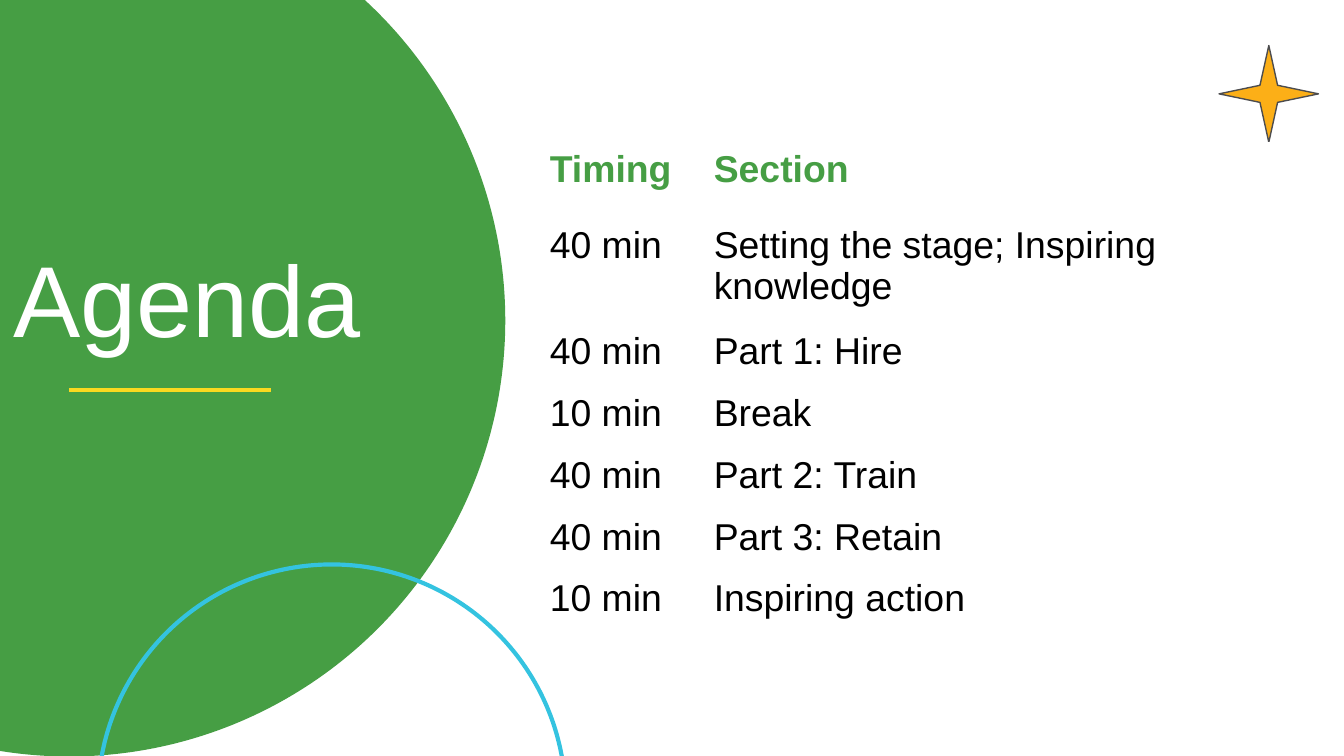
"""Build the agenda slide."""
import pptx
import pptx.chart.data
import pptx.dml.color
import pptx.enum.shapes
import pptx.enum.text
import pptx.util
from pptx.oxml.xmlchemy import OxmlElement

Cm, Pt = pptx.util.Cm, pptx.util.Pt
KIND = pptx.enum.shapes.MSO_SHAPE

TITLE = "Agenda"
AGENDA = [
    ("Timing", "Section"),
    ("40 min", "Setting the stage; Inspiring knowledge"),
    ("40 min", "Part 1: Hire"),
    ("10 min", "Break"),
    ("40 min", "Part 2: Train"),
    ("40 min", "Part 3: Retain"),
    ("10 min", "Inspiring action"),
]
COLS = [3.1, 11.05]
ROWS = [1.42, 2.01] + [1.17] * 4 + [2.01]
COLORS = {
    "green": "469E44", "white": "FFFFFF", "black": "000000", "gold": "FCAF17",
    "grey": "4C4C4E", "blue": "34C3E0", "yellow": "FAD920",
}


def color(name):
    return pptx.dml.color.RGBColor.from_string(COLORS[name])


def paint(fill, name):
    if name:
        fill.solid()
        fill.fore_color.rgb = color(name)
    else:
        fill.background()


def stroke(line, name, width):
    paint(line.fill, name)
    if name:
        line.width = Pt(width)


def style(para, size, name, bold=False):
    font = para.font
    font.name, font.size, font.bold = "Arial", Pt(size), bold
    font.color.rgb = color(name)


def add_shape(slide, kind, box, fill=None, line=None, width=0):
    shape = slide.shapes.add_shape(kind, *map(Cm, box))
    shape.shadow.inherit = False
    paint(shape.fill, fill)
    stroke(shape.line, line, width)
    return shape


def add_title(slide):
    title = slide.shapes.title
    slide.shapes._spTree.append(title._element)
    title.left, title.top, title.width, title.height = map(Cm, (0, 4.47, 8.84, 2.57))
    frame = title.text_frame
    frame.text = TITLE
    frame.word_wrap = True
    frame.auto_size = pptx.enum.text.MSO_AUTO_SIZE.NONE
    frame.vertical_anchor = pptx.enum.text.MSO_ANCHOR.MIDDLE
    frame.margin_left = frame.margin_right = Cm(0.25)
    frame.margin_top = frame.margin_bottom = Cm(0.25)
    para = frame.paragraphs[0]
    para.alignment = pptx.enum.text.PP_ALIGN.LEFT
    para.line_spacing = 0.9
    style(para, 54, "white")


def add_agenda(slide):
    box = map(Cm, (10.21, 2.69, sum(COLS), sum(ROWS)))
    table = slide.shapes.add_table(len(ROWS), len(COLS), *box).table
    table.horz_banding = table.first_row = False
    for col, width in zip(table.columns, COLS):
        col.width = Cm(width)
    for r, (height, texts) in enumerate(zip(ROWS, AGENDA)):
        table.rows[r].height = Cm(height)
        head = r == 0
        for c, text in enumerate(texts):
            cell = table.cell(r, c)
            cell.text = text
            cell.margin_left = cell.margin_right = Cm(0.18)
            cell.margin_top = cell.margin_bottom = Cm(0.13)
            paint(cell.fill, None if head else "white")
            style(cell.text_frame.paragraphs[0], 20, "green" if head else "black", head)


def add_rule(slide):
    ends = map(Cm, (1.3, 7.37, 5.13, 7.37))
    rule = slide.shapes.add_connector(pptx.enum.shapes.MSO_CONNECTOR.STRAIGHT, *ends)
    stroke(rule.line, "yellow", 2.25)
    rule._element.spPr.append(OxmlElement("a:effectLst"))


def main():
    deck = pptx.Presentation()
    deck.slide_width, deck.slide_height = Cm(25.4), Cm(14.29)
    slide = deck.slides.add_slide(deck.slide_layouts[5])
    paint(slide.background.fill, "white")
    add_shape(slide, KIND.OVAL, (-6.93, -2.18, 16.48, 16.48), "green")
    add_title(slide)
    star = add_shape(slide, KIND.STAR_4_POINT, (23.04, 0.86, 1.88, 1.83), "gold", "grey", 0.75)
    star.adjustments[0] = 0.125
    add_agenda(slide)
    add_shape(slide, KIND.OVAL, (1.85, 10.67, 8.84, 8.84), None, "blue", 2.25)
    add_rule(slide)
    deck.save("out.pptx")


if __name__ == "__main__":
    main()
